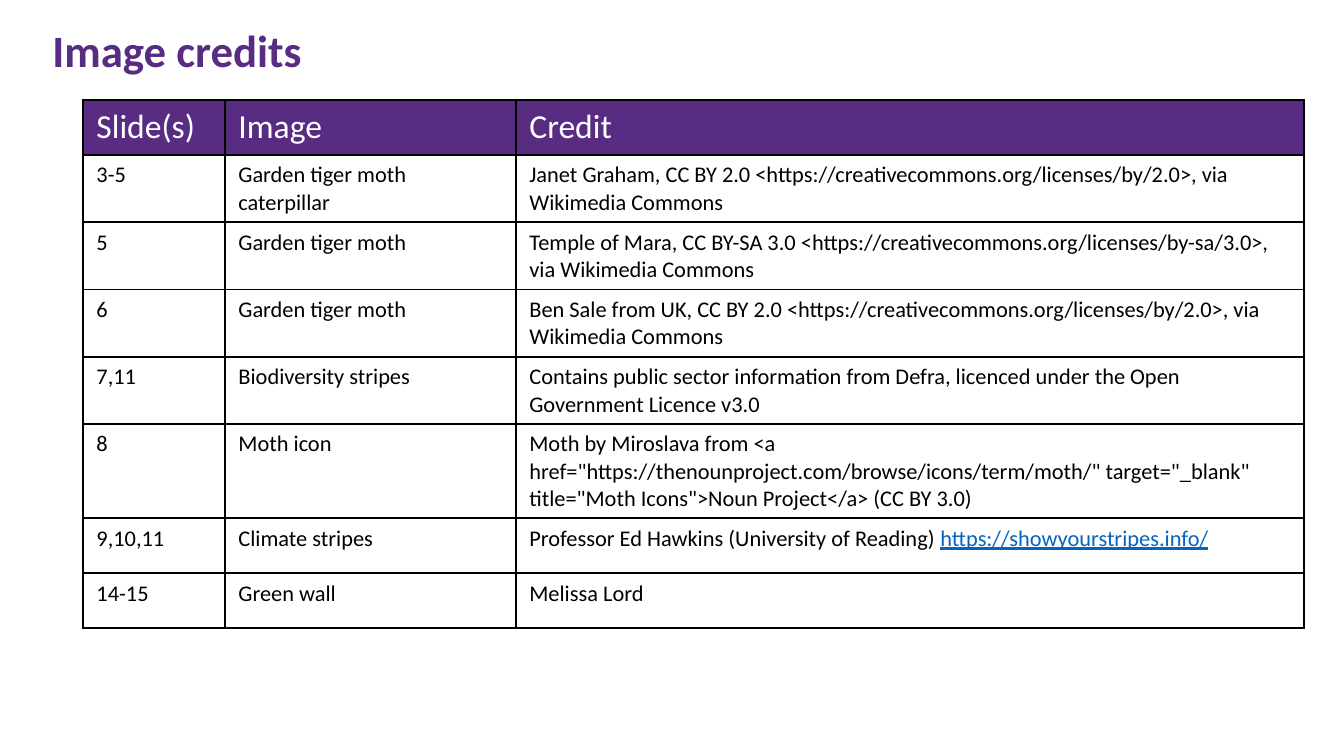
from dataclasses import dataclass

from lxml.etree import SubElement
from pptx import Presentation
from pptx.dml.color import RGBColor
from pptx.enum.text import MSO_ANCHOR, MSO_AUTO_SIZE, PP_ALIGN
from pptx.oxml.ns import qn
from pptx.util import Emu, Pt

FONT = "Calibri"
PURPLE = RGBColor(0x58, 0x2C, 0x83)
WHITE = RGBColor(0xFF, 0xFF, 0xFF)
BLACK = RGBColor(0x00, 0x00, 0x00)
LINK_BLUE = RGBColor(0x05, 0x63, 0xC1)

COLUMN_WIDTHS = (142, 291, 788)
ROW_HEIGHT = 55


@dataclass(frozen=True)
class Credit:
    slides: str
    image: str
    credit: str
    link: str = ""


HEADER = Credit("Slide(s)", "Image", "Credit")
CREDITS = (
    Credit("3-5", "Garden tiger moth caterpillar",
           "Janet Graham, CC BY 2.0 <https://creativecommons.org/licenses/by/2.0>, "
           "via Wikimedia Commons"),
    Credit("5", "Garden tiger moth",
           "Temple of Mara, CC BY-SA 3.0 <https://creativecommons.org/licenses/by-sa/3.0>, "
           "via Wikimedia Commons"),
    Credit("6", "Garden tiger moth",
           "Ben Sale from UK, CC BY 2.0 <https://creativecommons.org/licenses/by/2.0>, "
           "via Wikimedia Commons"),
    Credit("7,11", "Biodiversity stripes",
           "Contains public sector information from Defra, "
           "licenced under the Open Government Licence v3.0"),
    Credit("8", "Moth icon",
           'Moth by Miroslava from <a href="https://thenounproject.com/browse/icons/term/moth/" '
           'target="_blank" title="Moth Icons">Noun Project</a> (CC BY 3.0)'),
    Credit("9,10,11", "Climate stripes",
           "Professor Ed Hawkins (University of Reading) ", "https://showyourstripes.info/"),
    Credit("14-15", "Green wall", "Melissa Lord"),
)


def px(n: int) -> Emu:
    return Emu(round(n * 914400 / 134.4))


def style_run(r, size: int, color: RGBColor, bold: bool = False) -> None:
    r.font.name = FONT
    r.font.size = Pt(size)
    r.font.bold = bold
    r.font.color.rgb = color


def add_borders(cell) -> None:
    tc_pr = cell._tc.get_or_add_tcPr()
    for side in ("a:lnL", "a:lnR", "a:lnT", "a:lnB"):
        ln = SubElement(tc_pr, qn(side), w=str(Pt(1)))
        fill = SubElement(ln, qn("a:solidFill"))
        SubElement(fill, qn("a:srgbClr"), val=str(BLACK))


def fill_row(row, entry: Credit, size: int, color: RGBColor,
             background: RGBColor | None = None) -> None:
    for cell, text in zip(row.cells, (entry.slides, entry.image, entry.credit)):
        cell.text_frame.text = text
        style_run(cell.text_frame.paragraphs[0].runs[0], size, color)
        add_borders(cell)
        if background is None:
            cell.fill.background()
        else:
            cell.fill.solid()
            cell.fill.fore_color.rgb = background
    if entry.link:
        r = row.cells[2].text_frame.paragraphs[0].add_run()
        r.text = entry.link
        style_run(r, size, LINK_BLUE)
        r.font.underline = True


def add_title(slide, text: str) -> None:
    title = slide.shapes.title
    title.left, title.top, title.width, title.height = px(39), px(16), px(930), px(67)
    tf = title.text_frame
    tf.text = text
    tf.word_wrap = True
    tf.auto_size = MSO_AUTO_SIZE.SHAPE_TO_FIT_TEXT
    tf.vertical_anchor = MSO_ANCHOR.TOP
    p = tf.paragraphs[0]
    p.alignment = PP_ALIGN.LEFT
    style_run(p.runs[0], 24, PURPLE, bold=True)


def add_credits_table(slide) -> None:
    rows = len(CREDITS) + 1
    table = slide.shapes.add_table(
        rows, len(COLUMN_WIDTHS), px(83), px(100),
        px(sum(COLUMN_WIDTHS)), px(rows * ROW_HEIGHT)).table
    table.first_row = False
    table.horz_banding = False
    for column, width in zip(table.columns, COLUMN_WIDTHS):
        column.width = px(width)
    for row in table.rows:
        row.height = px(ROW_HEIGHT)
    header, *body = table.rows
    fill_row(header, HEADER, 18, WHITE, PURPLE)
    for row, entry in zip(body, CREDITS):
        fill_row(row, entry, 12, BLACK)


def main() -> None:
    prs = Presentation()
    prs.slide_width, prs.slide_height = px(1344), px(756)
    slide = prs.slides.add_slide(prs.slide_layouts[5])
    add_title(slide, "Image credits")
    add_credits_table(slide)
    prs.save("out.pptx")


if __name__ == "__main__":
    main()
